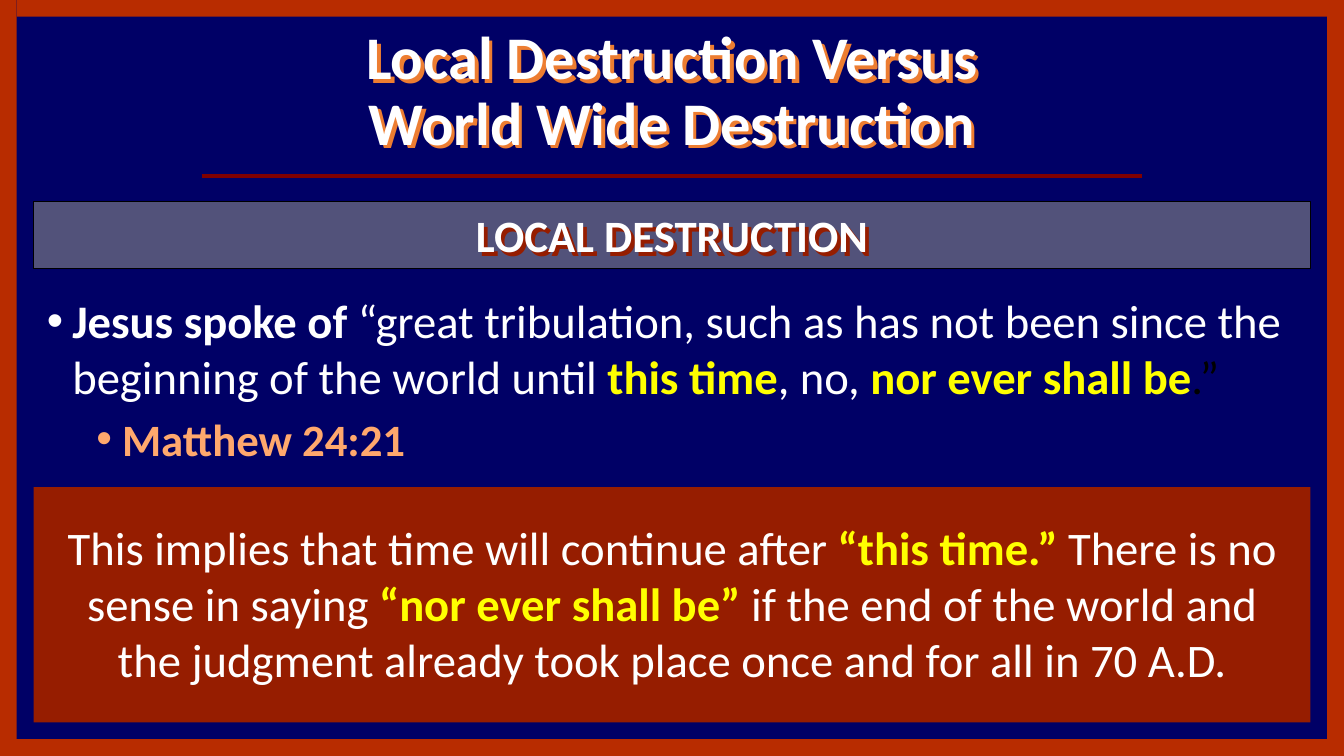
from lxml import etree
from pptx import Presentation
from pptx.dml.color import RGBColor
from pptx.enum.shapes import MSO_CONNECTOR, MSO_SHAPE
from pptx.enum.text import MSO_ANCHOR, MSO_AUTO_SIZE, PP_ALIGN
from pptx.oxml.ns import qn
from pptx.util import Inches, Pt

RECT = MSO_SHAPE.RECTANGLE
LINE = MSO_CONNECTOR.STRAIGHT
MID = MSO_ANCHOR.MIDDLE
FIXED = MSO_AUTO_SIZE.NONE
CENTER = PP_ALIGN.CENTER

WIDE = 10
HIGH = WIDE * 9 / 16
EDGE = WIDE / 80
LEFT = 2 * EDGE
SPAN = WIDE - 2 * LEFT
FONT = "Calibri"
WHITE, YELLOW, PEACH, BLACK = "FFFFFF", "FFFF00", "FFA86D", "000000"
NAVY, RUST, BRICK, SLATE = "000066", "B82C00", "961D00", "52527A"
MAROON, ORANGE = "800000", "ED7D31"

TITLE = "Local Destruction Versus\vWorld Wide Destruction"
LABEL = [("LOCAL DESTRUCTION", WHITE, True)]
QUOTE = [
    ("Jesus spoke of ", WHITE, True),
    ("“great tribulation, such as has not been since the beginning of the world until ", WHITE, False),
    ("this time", YELLOW, True),
    (", no, ", WHITE, False),
    ("nor ever shall be", YELLOW, True),
    (".”", BLACK, False),
]
VERSE = [("Matthew 24:21", PEACH, True)]
POINT = [
    ("This implies that time will continue after ", WHITE, False),
    ("“this time.” ", YELLOW, True),
    ("There is no sense in saying ", WHITE, False),
    ("“nor ever shall be” ", YELLOW, True),
    ("if the end of the world and the judgment already took place once and for all in 70 A.D.", WHITE, False),
]
BANDS = [
    (LEFT, 12 * EDGE, SPAN, 4 * EDGE, SLATE, BLACK),
    (LEFT, 29 * EDGE, SPAN, 14 * EDGE, BRICK, None),
]
FRAME = [
    (0, 0, EDGE, HIGH, RUST, None),
    (WIDE - EDGE, 0, EDGE, HIGH, RUST, None),
    (EDGE, 0, WIDE - 2 * EDGE, EDGE, RUST, None),
    (0, HIGH - EDGE, WIDE - EDGE, EDGE, RUST, None),
]


def color(code):
    return RGBColor.from_string(code)


def style(run, size, code, bold):
    font = run.font
    font.name, font.size, font.bold = FONT, Pt(size), bold
    font.color.rgb = color(code)


def write(para, parts, size):
    for text, code, bold in parts:
        run = para.add_run()
        run.text = text
        style(run, size, code, bold)


def shade(shape, code):
    props = shape._element.spPr
    group = etree.SubElement(props, qn("a:effectLst"))
    drop = etree.SubElement(group, qn("a:outerShdw"), dist="35921", dir="2700000", algn="ctr", rotWithShape="0")
    etree.SubElement(drop, qn("a:srgbClr"), val=code)


def bullet(para, indent):
    props = para._p.get_or_add_pPr()
    props.set("marL", str(Inches(indent)))
    props.set("indent", str(-Inches(0.19)))
    etree.SubElement(props, qn("a:buFont"), typeface="Arial")
    etree.SubElement(props, qn("a:buChar"), char="•")


def block(slide, left, top, width, height, fill, edge):
    shape = slide.shapes.add_shape(RECT, *map(Inches, (left, top, width, height)))
    shape.shadow.inherit = False
    shape.fill.solid()
    shape.fill.fore_color.rgb = color(fill)
    if edge:
        shape.line.color.rgb = color(edge)
        shape.line.width = Pt(0.75)
    else:
        shape.line.fill.background()


def textbox(slide, left, top, width, height):
    box = slide.shapes.add_textbox(*map(Inches, (left, top, width, height)))
    box.text_frame.word_wrap = True
    return box


def head(slide):
    title = slide.shapes.title
    title.left, title.top, title.width, title.height = map(Inches, (1.44, 0.19, 7.12, 1))
    frame = title.text_frame
    frame.text = TITLE
    frame.auto_size = FIXED
    frame.vertical_anchor = MID
    para = frame.paragraphs[0]
    para.alignment = CENTER
    para.line_spacing = 0.9
    for run in para.runs:
        style(run, 32.4, WHITE, True)
    shade(title, ORANGE)

    rule = slide.shapes.add_connector(LINE, *map(Inches, (1.5, 1.31, 8.5, 1.31)))
    rule.line.color.rgb = color(MAROON)
    rule.line.width = Pt(2)
    etree.SubElement(rule._element.spPr, qn("a:effectLst"))


def body(slide):
    frame = textbox(slide, LEFT, 17 * EDGE, SPAN, HIGH - 18.5 * EDGE).text_frame
    quote = frame.paragraphs[0]
    bullet(quote, 0.19)
    write(quote, QUOTE, 25)
    verse = frame.add_paragraph()
    verse.level = 1
    verse.space_before = Pt(3.8)
    bullet(verse, 0.56)
    write(verse, VERSE, 24)


def center(slide, spot, parts, size):
    box = textbox(slide, *spot)
    para = box.text_frame.paragraphs[0]
    para.alignment = CENTER
    write(para, parts, size)
    return box


def main():
    deck = Presentation()
    deck.slide_width, deck.slide_height = Inches(WIDE), Inches(HIGH)
    slide = deck.slides.add_slide(deck.slide_layouts[5])
    back = slide.background.fill
    back.solid()
    back.fore_color.rgb = color(NAVY)

    head(slide)
    body(slide)
    for band in BANDS:
        block(slide, *band)
    label = center(slide, BANDS[0][:4], LABEL, 24)
    shade(label, BRICK)
    center(slide, (0.33, 3.81, 9.34, 1.36), POINT, 25)
    for side in FRAME:
        block(slide, *side)
    deck.save("out.pptx")


if __name__ == "__main__":
    main()
